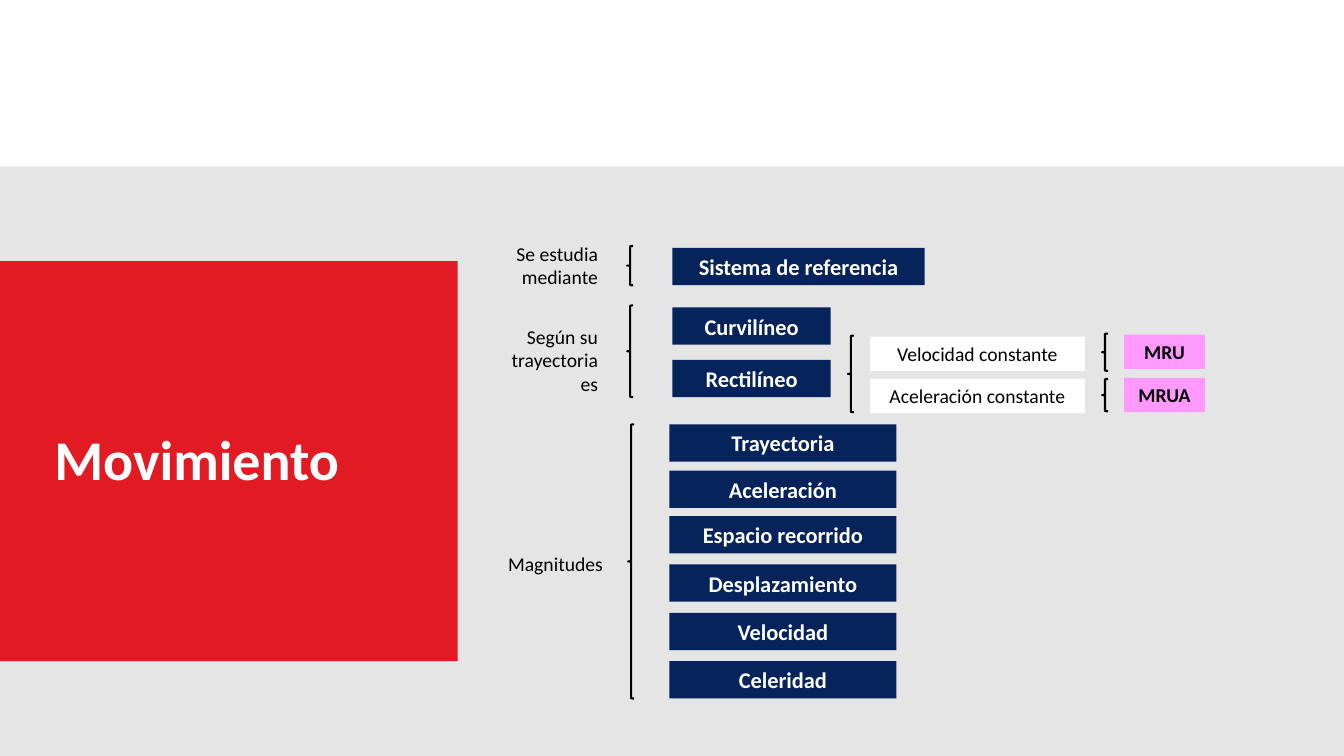
import pptx
import pptx.util
import pptx.dml.color
import pptx.enum.shapes
import pptx.enum.text

WIDTH, HEIGHT = 13.33, 7.5
COLORS = {
    "gray": "E5E5E5", "red": "E21A23", "navy": "06235B",
    "white": "FFFFFF", "pink": "FF99FF", "black": "000000",
}
STYLES = {
    "concept": {"fill": "navy", "color": "white", "size": 16, "bold": True, "height": 0.37},
    "condition": {"fill": "white", "color": "black", "size": 14, "bold": False, "height": 0.34},
    "acronym": {"fill": "pink", "color": "black", "size": 14, "bold": True, "height": 0.34},
}
PANELS = [
    ("gray", 0, 1.65, WIDTH, HEIGHT - 1.65),
    ("red", 0, 2.59, 4.54, 3.97),
]
COLUMNS = [
    ("concept", 6.67, 2.5, [("Sistema de referencia", 2.46)]),
    ("concept", 6.67, 1.57, [("Curvilíneo", 3.05), ("Rectilíneo", 3.57)]),
    ("concept", 6.64, 2.25, [
        ("Trayectoria", 4.21), ("Aceleración", 4.67), ("Espacio recorrido", 5.12),
        ("Desplazamiento", 5.6), ("Velocidad", 6.08), ("Celeridad", 6.56),
    ]),
    ("condition", 8.63, 2.13, [("Velocidad constante", 3.34), ("Aceleración constante", 3.76)]),
    ("acronym", 11.15, 0.8, [("MRU", 3.32), ("MRUA", 3.75)]),
]
LABELS = [
    ("Se estudia mediante", 4.83, 2.35, 1.2, 0.57),
    ("Según su trayectoria es", 4.83, 3.17, 1.2, 0.81),
    ("Magnitudes", 4.78, 5.43, 1.3, 0.34),
]
TITLE = ("Movimiento", 0.44, 4.16, 3.67, 0.77)
BRACE_WIDTH = 0.06
BRACES = [
    (6.22, 2.44, 0.39), (6.22, 3.03, 0.91), (6.23, 4.21, 2.72),
    (8.41, 3.33, 0.76), (10.93, 3.31, 0.37), (10.93, 3.76, 0.32),
]

SHAPES = pptx.enum.shapes.MSO_SHAPE
ALIGN = pptx.enum.text.PP_ALIGN


def rgb(name):
    return pptx.dml.color.RGBColor.from_string(COLORS[name])


def inches(*lengths):
    return [pptx.util.Inches(length) for length in lengths]


def write(shape, text, size, color, bold, align):
    frame = shape.text_frame
    frame.word_wrap = True
    paragraph = frame.paragraphs[0]
    paragraph.text = text
    paragraph.alignment = align
    paragraph.font.name = "Calibri"
    paragraph.font.size = pptx.util.Pt(size)
    paragraph.font.bold = bold
    paragraph.font.color.rgb = rgb(color)


def add_rectangle(slide, fill, *box):
    shape = slide.shapes.add_shape(SHAPES.RECTANGLE, *inches(*box))
    shape.shadow.inherit = False
    shape.fill.solid()
    shape.fill.fore_color.rgb = rgb(fill)
    shape.line.fill.background()
    return shape


def add_label(slide, text, box, size, color, bold, align):
    write(slide.shapes.add_textbox(*inches(*box)), text, size, color, bold, align)


def add_brace(slide, left, top, height):
    brace = slide.shapes.add_shape(SHAPES.LEFT_BRACE, *inches(left, top, BRACE_WIDTH, height))
    brace.shadow.inherit = False
    brace.fill.background()
    brace.line.color.rgb = rgb("black")
    brace.line.width = pptx.util.Pt(1.5)


def main():
    presentation = pptx.Presentation()
    presentation.slide_width, presentation.slide_height = inches(WIDTH, HEIGHT)
    slide = presentation.slides.add_slide(presentation.slide_layouts[6])

    for panel in PANELS:
        add_rectangle(slide, *panel)
    for style_name, left, width, entries in COLUMNS:
        style = STYLES[style_name]
        for text, top in entries:
            shape = add_rectangle(slide, style["fill"], left, top, width, style["height"])
            write(shape, text, style["size"], style["color"], style["bold"], ALIGN.CENTER)

    title, *title_box = TITLE
    add_label(slide, title, title_box, 40, "white", True, ALIGN.LEFT)
    for text, *box in LABELS:
        add_label(slide, text, box, 14, "black", False, ALIGN.RIGHT)
    for brace in BRACES:
        add_brace(slide, *brace)

    presentation.save("out.pptx")


if __name__ == "__main__":
    main()
